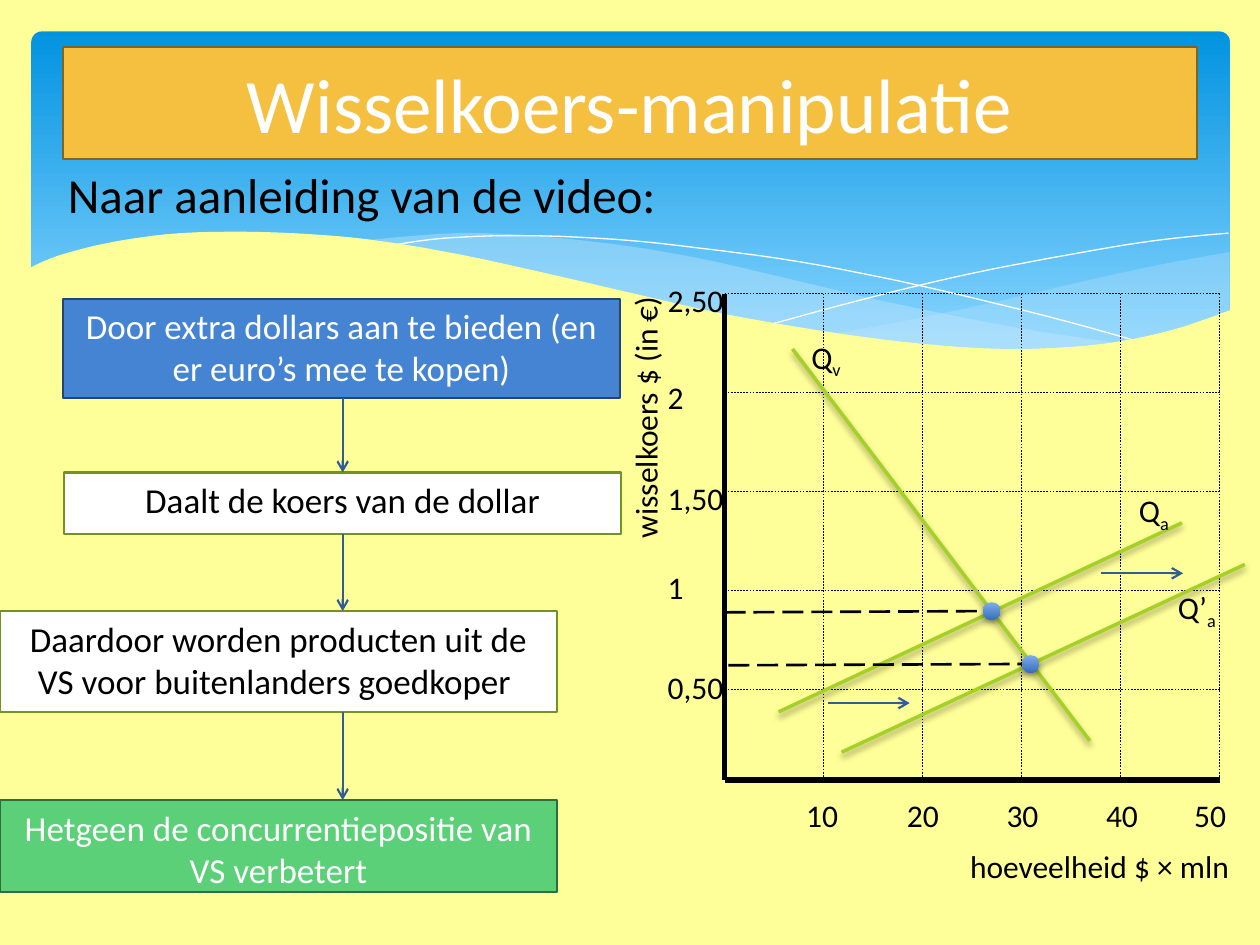
from lxml.etree import SubElement
from pptx import Presentation
from pptx.dml.color import RGBColor
from pptx.enum.dml import MSO_LINE as Dash
from pptx.enum.shapes import MSO_CONNECTOR, MSO_SHAPE as Shape
from pptx.enum.text import MSO_ANCHOR as Anchor, MSO_AUTO_SIZE as AutoSize, PP_ALIGN as Align
from pptx.oxml.ns import qn
from pptx.util import Inches, Pt

TITLE = "Wisselkoers-manipulatie"
INTRO = "Naar aanleiding van de video:"
# text, left, top, height, fill, border, font colour
STEPS = [
    ("Door extra dollars aan te bieden (en er euro’s mee te kopen)",
     0.5, 2.37, 0.79, "4584D3", "24456E", "FFFFFF"),
    ("Daalt de koers van de dollar", 0.51, 3.75, 0.49, "FFFFFF", "74931C", "000000"),
    ("Daardoor worden producten uit de VS voor buitenlanders goedkoper ",
     0, 4.85, 0.8, "FFFFFF", "74931C", "000000"),
    ("Hetgeen de concurrentiepositie van VS verbetert",
     0, 6.35, 0.73, "5BD078", "2F6D3F", "FFFFFF"),
]
STEP_W, FLOW_X = 4.42, 2.72

# Graph: label and its position along the axis
GRAPH_X, GRAPH_Y, GRAPH_R, GRAPH_B = 5.75, 2.33, 9.68, 6.19
CELLS = 5
CELL = (GRAPH_R - GRAPH_X) / CELLS
PRICES = [("2,50", 2.18), ("2", 2.95), ("1,50", 3.75), ("1", 4.46), ("0,50", 5.25)]
QUANTITIES = [("10", 6.3), ("20", 7.1), ("30", 7.89), ("40", 8.68), ("50", 9.38)]
CURVES = [  # name, subscript, label place, start, end
    ("Q", "a", (8.94, 3.85), (6.18, 5.65), (9.38, 4.15)),
    ("Q", "v", (6.34, 2.63), (6.29, 2.77), (8.65, 5.88)),
    ("Q’", "a", (9.25, 4.62), (6.68, 5.97), (9.88, 4.48)),
]
EQUILIBRIA = [((5.75, 4.86), (7.87, 4.85)), ((5.78, 5.28), (8.18, 5.27))]
SHIFTS = [((8.74, 4.55), (9.39, 4.55)), ((6.57, 5.58), (7.22, 5.58))]
DOT = 0.14

# Waves: each edge is a list of points that a smooth curve runs through
UNITS = 1000  # freeform grid units per inch
WAVE_RIGHT = [
    [(9.76, 2), (9.21, 2.1), (8.61, 2.23), (7.79, 2.42), (7.06, 2.57), (6.61, 2.65)],
    [(6.61, 2.65), (7.05, 2.71), (7.57, 2.76), (8.14, 2.78), (8.72, 2.74),
     (9.28, 2.63), (9.76, 2.47)],
]
WAVE_MIDDLE = [
    [(8.93, 2.73), (8.07, 2.6), (7.06, 2.4), (6.29, 2.22), (5.55, 2.05),
     (4.89, 1.94), (4.2, 1.87), (3.61, 1.85), (2.86, 1.91)],
    [(2.86, 1.91), (3.62, 2.03), (4.49, 2.22), (5.66, 2.48), (6.5, 2.64),
     (7.22, 2.74), (7.85, 2.78), (8.38, 2.78), (8.93, 2.73)],
]
WAVE_LINES = [
    [[(3.09, 1.95), (3.53, 1.89), (4.16, 1.87), (4.89, 1.9), (5.56, 1.97),
      (6.36, 2.08), (7.27, 2.26), (8.31, 2.51), (9.07, 2.72)]],
    [[(6.13, 2.57), (6.95, 2.35), (7.76, 2.16), (8.66, 1.99), (9.24, 1.9), (9.75, 1.85)]],
]
WAVE_FRONT = [
    [(9.77, 2.46), (9.3, 2.62), (8.75, 2.73), (8.09, 2.77), (7.44, 2.74),
     (6.68, 2.65), (5.79, 2.5), (5.03, 2.33), (4.47, 2.2), (3.65, 2.02),
     (2.92, 1.9), (2.3, 1.85), (1.77, 1.84), (1.32, 1.86), (0.85, 1.93),
     (0.46, 2.03), (0.23, 2.13)],
    [(0.23, 3.29), (9.77, 3.29)],
]


def rgb(colour):
    return RGBColor.from_string(colour)


def write(frame, text, size=18, colour="000000", sub="", align=Align.LEFT,
          wrap=False, anchor=Anchor.TOP):
    frame.word_wrap, frame.auto_size, frame.vertical_anchor = wrap, AutoSize.NONE, anchor
    paragraph = frame.paragraphs[0]
    paragraph.alignment, paragraph.space_before = align, Pt(0)
    props = paragraph._p.get_or_add_pPr()
    props.set("marL", "0")
    props.set("indent", "0")
    SubElement(props, qn("a:buNone"))
    for part in filter(None, (text, sub)):
        run = paragraph.add_run()
        run.text = part
        run.font.size, run.font.name, run.font.bold = Pt(size), "Calibri", False
        run.font.color.rgb = rgb(colour)
    if sub:
        run.font._element.set("baseline", "-25000")


def label(text, x, y, w=0.65, h=0.4, rotation=0, **style):
    box = slide.shapes.add_textbox(*map(Inches, (x, y, w, h)))
    box.rotation = rotation
    write(box.text_frame, text, **style)


def panel(holder, text, box, fill, border, **style):
    holder.left, holder.top, holder.width, holder.height = map(Inches, box)
    holder.fill.solid()
    holder.fill.fore_color.rgb = rgb(fill)
    holder.line.color.rgb, holder.line.width = rgb(border), Pt(1.25)
    write(holder.text_frame, text, align=Align.CENTER, wrap=True, **style)


def cast_shadow(effects):
    shadow = SubElement(effects, qn("a:outerShdw"), blurRad=str(Pt(4)), dist=str(Pt(2)),
                        dir="5400000", rotWithShape="0")
    black = SubElement(shadow, qn("a:srgbClr"), val="000000")
    SubElement(black, qn("a:alpha"), val="38000")


def line(start, end, colour="000000", width=0.25, dash=None, arrow=False, shadow=False):
    link = slide.shapes.add_connector(MSO_CONNECTOR.STRAIGHT, *map(Inches, (*start, *end)))
    link.line.color.rgb, link.line.width = rgb(colour), Pt(width)
    if dash:
        link.line.dash_style = dash
    if arrow:
        SubElement(link.line._get_or_add_ln(), qn("a:tailEnd"), type="arrow")
    effects = SubElement(link._element.spPr, qn("a:effectLst"))
    if shadow:
        cast_shadow(effects)


def gradient_shape(kind, box, stops):
    shape = slide.shapes.add_shape(kind, *map(Inches, box))
    shape.shadow.inherit = False
    shape.line.fill.background()
    shape.fill.gradient()
    shape.fill.gradient_angle = 270
    for stop, (position, colour) in zip(shape.fill.gradient_stops, stops):
        stop.position, stop.color.rgb = position, rgb(colour)
    return shape


def smooth(points, steps=5):
    """Return points on a Catmull-Rom curve through the given ones."""
    if len(points) < 3:
        return points
    padded = [points[0], *points, points[-1]]
    curve = [points[0]]
    for a, b, c, d in zip(padded, padded[1:], padded[2:], padded[3:]):
        for t in (n / steps for n in range(1, steps + 1)):
            curve.append(tuple(
                (2 * q + (r - p) * t + (2 * p - 5 * q + 4 * r - s) * t ** 2
                 + (3 * q - p - 3 * r + s) * t ** 3) / 2
                for p, q, r, s in zip(a, b, c, d)))
    return curve


def wave(edges, fill=None, alpha=100):
    """Draw a filled wave, or a thin white line if there is no fill."""
    points = [(round(x * UNITS), round(y * UNITS))
              for edge in edges for x, y in smooth(edge)]
    builder = slide.shapes.build_freeform(*points[0], scale=Inches(1) / UNITS)
    builder.add_line_segments(points[1:], close=bool(fill))
    shape = builder.convert_to_shape()
    shape.shadow.inherit = False
    if not fill:
        shape.fill.background()
        shape.line.color.rgb, shape.line.width = rgb("FFFFFF"), Pt(0)
        return
    shape.line.fill.background()
    shape.fill.solid()
    shape.fill.fore_color.rgb = rgb(fill)
    colour = shape._element.spPr.find(qn("a:solidFill"))[0]
    SubElement(colour, qn("a:alpha"), val=str(alpha * 1000))


deck = Presentation()
deck.slide_width, deck.slide_height = Inches(10), Inches(7.5)
slide = deck.slides.add_slide(deck.slide_layouts.get_by_name("Comparison"))
slide.background.fill.solid()
slide.background.fill.fore_color.rgb = rgb("FFFF99")
title, *bodies = [holder for holder in slide.placeholders
                  if holder.placeholder_format.idx < 5]

sky = gradient_shape(Shape.ROUNDED_RECTANGLE, (0.25, 0.25, 9.51, 2.7),
                     [(0, "0293E0"), (0.9, "83D3FE")])
sky.adjustments[0] = 0.03
wave(WAVE_RIGHT, "C6E7FC", 29)
wave(WAVE_MIDDLE, "C6E7FC", 40)
for edges in WAVE_LINES:
    wave(edges)
wave(WAVE_FRONT, "FFFF99")

for holder in (title, *bodies):  # bring in front of the waves
    slide.shapes._spTree.append(holder._element)
panel(title, TITLE, (0.5, 0.37, 9, 0.89), "F5C040", "806421",
      size=44, colour="FFFFFF", anchor=Anchor.MIDDLE)
for holder, (text, x, y, h, fill, border, colour) in zip(bodies, STEPS):
    panel(holder, text, (x, y, STEP_W, h), fill, border, size=20, colour=colour)
for (_, _, y, h, *_), (_, _, below, *_) in zip(STEPS, STEPS[1:]):
    line((FLOW_X, y + h), (FLOW_X, below), "315D95", 1.25, arrow=True)

line((GRAPH_X, GRAPH_Y), (GRAPH_X, GRAPH_B), width=3)
line((GRAPH_R, GRAPH_B), (GRAPH_X, GRAPH_B), width=3)
for n in range(CELLS):
    y, x = GRAPH_Y + n * CELL, GRAPH_X + (n + 1) * CELL
    line((GRAPH_X, y), (GRAPH_R, y), dash=Dash.DASH)
    line((x, GRAPH_Y), (x, GRAPH_B), dash=Dash.DASH)
label("hoeveelheid $ × mln", 7.6, 6.67, 2.29)
label("wisselkoers $ (in €)", 4.05, 3.1, 2.14, rotation=270)
for price, y in PRICES:
    label(price, 5.2, y)
for quantity, x in QUANTITIES:
    label(quantity, x, 6.27, 0.46)

for name, sub, place, start, end in CURVES:
    line(start, end, "A5D028", 2, shadow=True)
    label(name, *place, 0.45, sub=sub)
for start, (x, y) in EQUILIBRIA:
    line(start, (x - DOT / 2, y), width=1.5, dash=Dash.LONG_DASH)
    dot = gradient_shape(Shape.OVAL, (x - DOT / 2, y - DOT / 2, DOT, DOT),
                         [(0, "80ACEA"), (1, "3570BA")])
    cast_shadow(dot._element.spPr.find(qn("a:effectLst")))
for start, end in SHIFTS:
    line(start, end, "315D95", 1.25, arrow=True)
label(INTRO, 0.44, 1.26, 4.92, 0.57, size=28)

deck.save("out.pptx")
